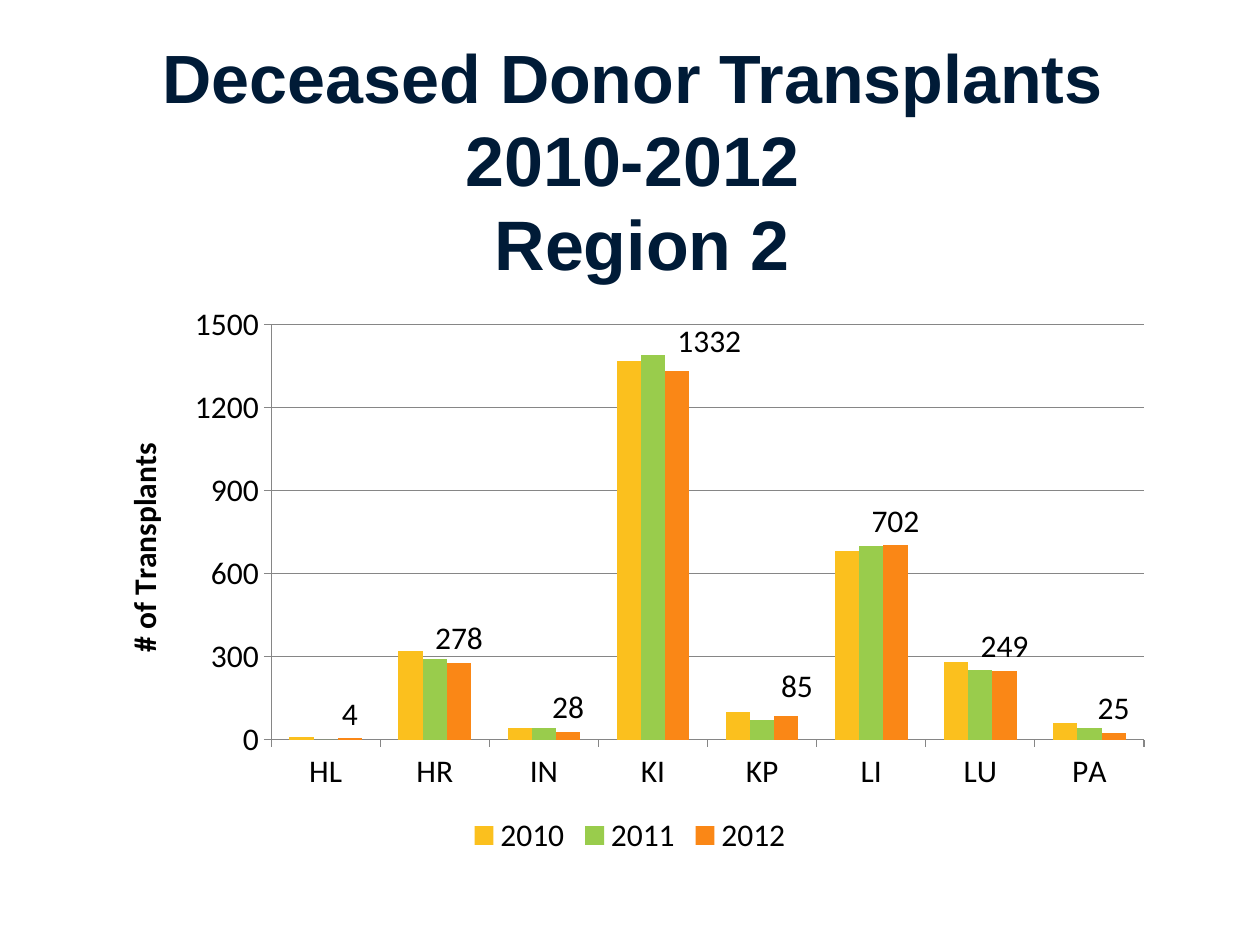
from pptx import Presentation
from pptx.util import Pt
from pptx.dml.color import RGBColor
from pptx.chart.data import CategoryChartData
from pptx.enum.chart import XL_CHART_TYPE, XL_LABEL_POSITION, XL_LEGEND_POSITION, XL_TICK_MARK
from pptx.enum.text import MSO_ANCHOR, PP_ALIGN
from pptx.oxml import parse_xml
from pptx.oxml.ns import nsdecls


def tint(code):
    return RGBColor.from_string(code)


def layout(target, **sizes):
    tags = "".join(f'<c:{key} val="{val}"/>' for key, val in sizes.items())
    return parse_xml(f'<c:layout {nsdecls("c")}><c:manualLayout>{target}{tags}'
                     '</c:manualLayout></c:layout>')


deck = Presentation()
deck.slide_width, deck.slide_height = Pt(720), Pt(540)
slide = deck.slides.add_slide(deck.slide_layouts[6])

data = CategoryChartData()
data.categories = ["HL", "HR", "IN", "KI", "KP", "LI", "LU", "PA"]
data.add_series("2010", [10, 320, 40, 1370, 100, 680, 280, 60])
data.add_series("2011", [0, 290, 40, 1390, 70, 700, 250, 40])
data.add_series("2012", [4, 278, 28, 1332, 85, 702, 249, 25])
chart = slide.shapes.add_chart(XL_CHART_TYPE.COLUMN_CLUSTERED, Pt(54), Pt(168),
                               Pt(612), Pt(324), data).chart
chart.has_title = False
chart.font.name = "Calibri"
chart.font.size = Pt(18)
chart.font.color.rgb = tint("000000")
chart.has_legend = True
chart.legend.position = XL_LEGEND_POSITION.BOTTOM
chart.legend.include_in_layout = False

plot = chart.plots[0]
plot.vary_by_categories = False
plot.gap_width = 150
plot.overlap = 0
for row, code in zip(plot.series, ["FBC01E", "99CC4C", "FA8716"]):
    row.format.fill.solid()
    row.format.fill.fore_color.rgb = tint(code)

last = plot.series[2]
tags = last.data_labels
tags.show_value = True
tags.position = XL_LABEL_POSITION.OUTSIDE_END
for spot in (3, 4):
    last.points[spot].data_label.position = XL_LABEL_POSITION.OUTSIDE_END
shifts = [(0.03, -0.01), (0.01, -0.01)]
for node, (x, y) in zip(chart.element.xpath(".//c:dLbl/c:idx"), shifts):
    node.addnext(layout("", x=x, y=y))

axis = chart.value_axis
axis.minimum_scale, axis.maximum_scale, axis.major_unit = 0, 1500, 300
axis.has_major_gridlines = True
axis.axis_title.text_frame.text = "# of Transplants"
font = axis.axis_title.text_frame.paragraphs[0].runs[0].font
font.name, font.size, font.bold = "Calibri", Pt(18), True
font.color.rgb = tint("000000")
grid = axis.major_gridlines.format.line
grid.color.rgb = tint("868686")
grid.width = Pt(1)
for side in (axis, chart.category_axis):
    side.major_tick_mark = XL_TICK_MARK.OUTSIDE
    side.format.line.color.rgb = tint("868686")
    side.format.line.width = Pt(0.75)

area = chart.element.xpath(".//c:plotArea")[0]
for old in area.xpath("./c:layout"):
    area.remove(old)
area.insert(0, layout('<c:layoutTarget val="inner"/><c:xMode val="edge"/><c:yMode val="edge"/>',
                      x=0.165, y=0.054, w=0.815, h=0.732))

title = slide.shapes.add_textbox(Pt(23), Pt(12), Pt(688), Pt(67))
frame = title.text_frame
frame.word_wrap = True
frame.vertical_anchor = MSO_ANCHOR.TOP
frame.margin_top = Pt(8)
para = frame.paragraphs[0]
para.alignment = PP_ALIGN.CENTER
for text, size in [("Deceased Donor Transplants ", 39), ("2010-2012 ", 40), ("Region 2", 40)]:
    if para.runs:
        para.add_line_break()
    run = para.add_run()
    run.text = text
    run.font.name, run.font.size, run.font.bold = "Arial", Pt(size), True
    run.font.color.rgb = tint("001B37")

deck.save("out.pptx")
